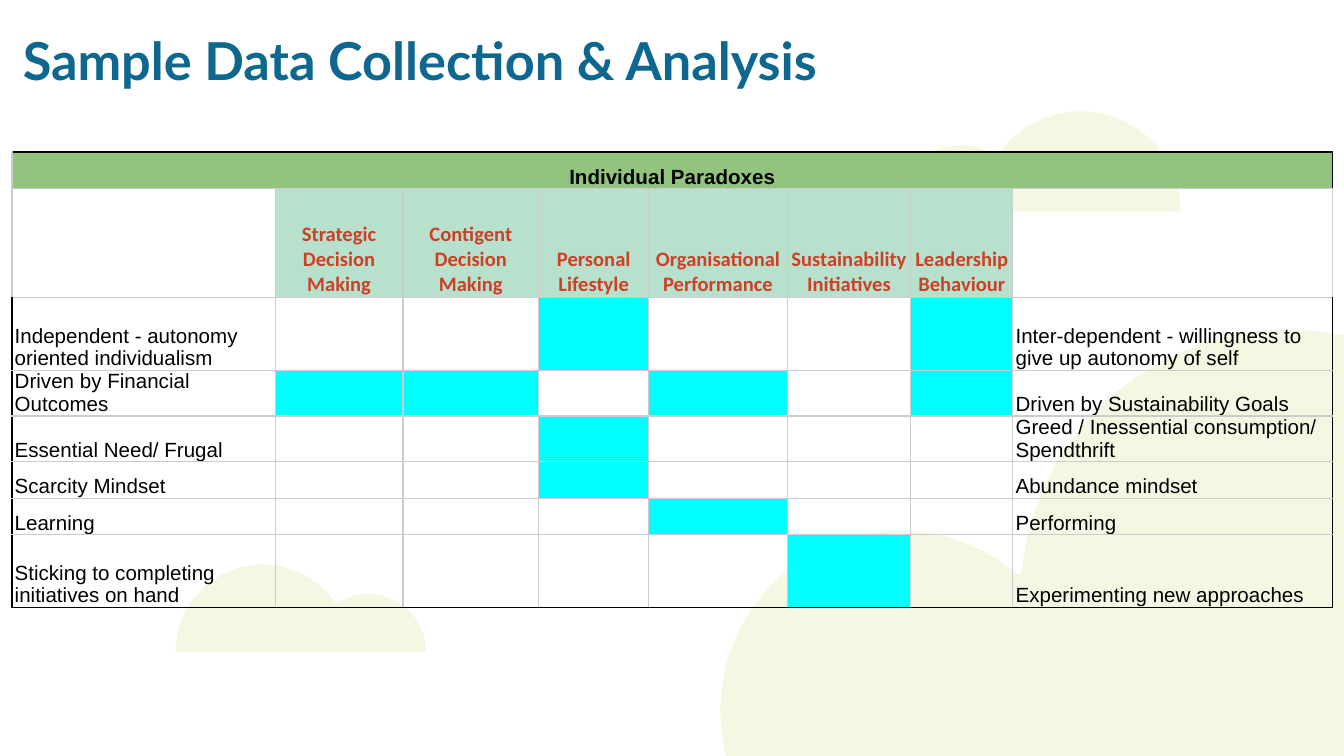
from dataclasses import dataclass
from math import cos, hypot, radians, sin

from lxml import etree
from pptx import Presentation
from pptx.dml.color import RGBColor
from pptx.enum.text import MSO_ANCHOR, PP_ALIGN
from pptx.oxml.ns import qn
from pptx.util import Pt

TOP, BOTTOM = MSO_ANCHOR.TOP, MSO_ANCHOR.BOTTOM
LEFT, CENTER = PP_ALIGN.LEFT, PP_ALIGN.CENTER
TITLE_ONLY = 5

COLORS = {
    "cloud": "F6F7E3",
    "title": "0D678F",
    "banner": "93C47D",
    "header": "B7E1CD",
    "header_text": "CC4125",
    "mark": "00FFFF",
    "black": "000000",
    "grid": "CCCCCC",
}

TEXT_SIZE = 11
BORDER_WIDTH = 0.75
COLUMN_WIDTHS = (141.1, 68.4, 72.7, 59, 74.2, 66.2, 54.7, 171.4)
ROW_HEIGHTS = (19.5, 58.5, 39, 19.5, 19.5, 19.5, 19.5, 39)
HEADERS = (
    "Strategic Decision Making",
    "Contigent Decision Making",
    "Personal Lifestyle",
    "Organisational Performance",
    "Sustainability Initiatives",
    "Leadership Behaviour",
)


@dataclass
class Paradox:
    left: str
    right: str
    marked: tuple[int, ...]


@dataclass
class Lobe:
    """Arc of a cloud, from the start to the end angle over the top."""
    x: float
    y: float
    radius: float
    start: float = 180
    end: float = 0

    def points(self, steps: int = 60) -> list[tuple[float, float]]:
        angles = (radians(self.start + (self.end - self.start) * i / steps)
                  for i in range(steps + 1))
        return [(self.x + self.radius * cos(a), self.y - self.radius * sin(a))
                for a in angles]

    def contains(self, x: float, y: float) -> bool:
        return hypot(x - self.x, y - self.y) < self.radius - 0.01


PARADOXES = (
    Paradox("Independent - autonomy oriented individualism",
            "Inter-dependent - willingness to give up autonomy of self", (3, 6)),
    Paradox("Driven by Financial Outcomes",
            "Driven by Sustainability Goals", (1, 2, 4, 6)),
    Paradox("Essential Need/ Frugal",
            "Greed / Inessential consumption/ Spendthrift", (3,)),
    Paradox("Scarcity Mindset", "Abundance mindset", (3,)),
    Paradox("Learning", "Performing", (4,)),
    Paradox("Sticking to completing initiatives on hand",
            "Experimenting new approaches", (5,)),
)

CLOUDS = (
    (Lobe(514.8, 113.2, 35.3), Lobe(578.9, 113.2, 53.6)),
    (Lobe(140.8, 349.2, 46.8), Lobe(197.3, 349.2, 31)),
    (Lobe(482.4, 380.9, 96.5, start=197.8), Lobe(690.5, 320.6, 144, end=75.5)),
)


def rgb(name: str) -> RGBColor:
    return RGBColor.from_string(COLORS[name])


def add_cloud(s, lobes: tuple[Lobe, ...]) -> None:
    outline = [p for lobe in lobes for p in lobe.points()
               if not any(other.contains(*p) for other in lobes if other is not lobe)]
    outline.append((outline[-1][0], outline[0][1]))
    start, *rest = [(Pt(x), Pt(y)) for x, y in outline]
    builder = s.shapes.build_freeform(*start)
    builder.add_line_segments(rest)
    sp = builder.convert_to_shape()
    sp.shadow.inherit = False
    sp.fill.solid()
    sp.fill.fore_color.rgb = rgb("cloud")
    sp.line.fill.background()


def style_run(r, font: str, size: float, color: str, bold: bool) -> None:
    r.font.name, r.font.size, r.font.bold = font, Pt(size), bold
    r.font.color.rgb = rgb(color)


def add_title(s, text: str) -> None:
    sp = s.shapes.title
    sp.left, sp.top, sp.width, sp.height = Pt(12.2), Pt(15.1), Pt(429), Pt(66.2)
    tf = sp.text_frame
    tf.text = text
    tf.margin_left = tf.margin_right = tf.margin_top = tf.margin_bottom = 0
    tf.vertical_anchor = TOP
    tf.word_wrap = True
    p = tf.paragraphs[0]
    p.alignment = LEFT
    style_run(p.runs[0], "Lato", 28, "title", True)


def set_borders(cell, black_sides: str) -> None:
    tc_pr = cell._tc.get_or_add_tcPr()
    for i, side in enumerate("LRTB"):
        ln = etree.Element(qn(f"a:ln{side}"), w=str(Pt(BORDER_WIDTH)))
        fill = etree.SubElement(ln, qn("a:solidFill"))
        color = COLORS["black" if side in black_sides else "grid"]
        etree.SubElement(fill, qn("a:srgbClr"), val=color)
        tc_pr.insert(i, ln)


def format_cell(cell, text: str = "", fill: str = "", font: str = "Arial",
                color: str = "black", bold: bool = False, align=LEFT) -> None:
    cell.margin_left = cell.margin_right = Pt(1.5)
    cell.margin_top = cell.margin_bottom = 0
    cell.vertical_anchor = BOTTOM
    if fill:
        cell.fill.solid()
        cell.fill.fore_color.rgb = rgb(fill)
    else:
        cell.fill.background()
    p = cell.text_frame.paragraphs[0]
    p.alignment = align
    if text:
        p.text = text
        style_run(p.runs[0], font, TEXT_SIZE, color, bold)
    else:
        etree.SubElement(p._p, qn("a:endParaRPr"), sz=str(TEXT_SIZE * 100))


def black_sides(row: int, col: int) -> str:
    if row == 0:
        return "TR"
    if row == 1:
        return ""
    last_row, last_col = len(ROW_HEIGHTS) - 1, len(COLUMN_WIDTHS) - 1
    return ("L" * (col == 0) + "R" * (col == last_col) + "B" * (row == last_row))


def add_paradox_table(s) -> None:
    n_rows, n_cols = len(ROW_HEIGHTS), len(COLUMN_WIDTHS)
    table = s.shapes.add_table(n_rows, n_cols, Pt(6.4), Pt(81.4),
                               Pt(sum(COLUMN_WIDTHS)), Pt(sum(ROW_HEIGHTS))).table
    table.first_row = table.horz_banding = False
    for column, width in zip(table.columns, COLUMN_WIDTHS):
        column.width = Pt(width)
    for row, height in zip(table.rows, ROW_HEIGHTS):
        row.height = Pt(height)

    table.cell(0, 0).merge(table.cell(0, n_cols - 1))
    for col in range(n_cols):
        format_cell(table.cell(0, col), "" if col else "Individual Paradoxes",
                    "banner", bold=True, align=CENTER)
    for col, text in enumerate(("", *HEADERS, "")):
        format_cell(table.cell(1, col), text, "header" if text else "",
                    "Calibri", "header_text", True, CENTER)
    for row, paradox in enumerate(PARADOXES, start=2):
        texts = (paradox.left, *[""] * len(HEADERS), paradox.right)
        for col, text in enumerate(texts):
            format_cell(table.cell(row, col), text,
                        "mark" if col in paradox.marked else "")
    for row in range(n_rows):
        for col in range(n_cols):
            set_borders(table.cell(row, col), black_sides(row, col))


def main() -> None:
    prs = Presentation()
    prs.slide_width, prs.slide_height = Pt(720), Pt(405)
    s = prs.slides.add_slide(prs.slide_layouts[TITLE_ONLY])
    for lobes in CLOUDS:
        add_cloud(s, lobes)
    add_title(s, "Sample Data Collection & Analysis")
    add_paradox_table(s)
    prs.save("out.pptx")


if __name__ == "__main__":
    main()
